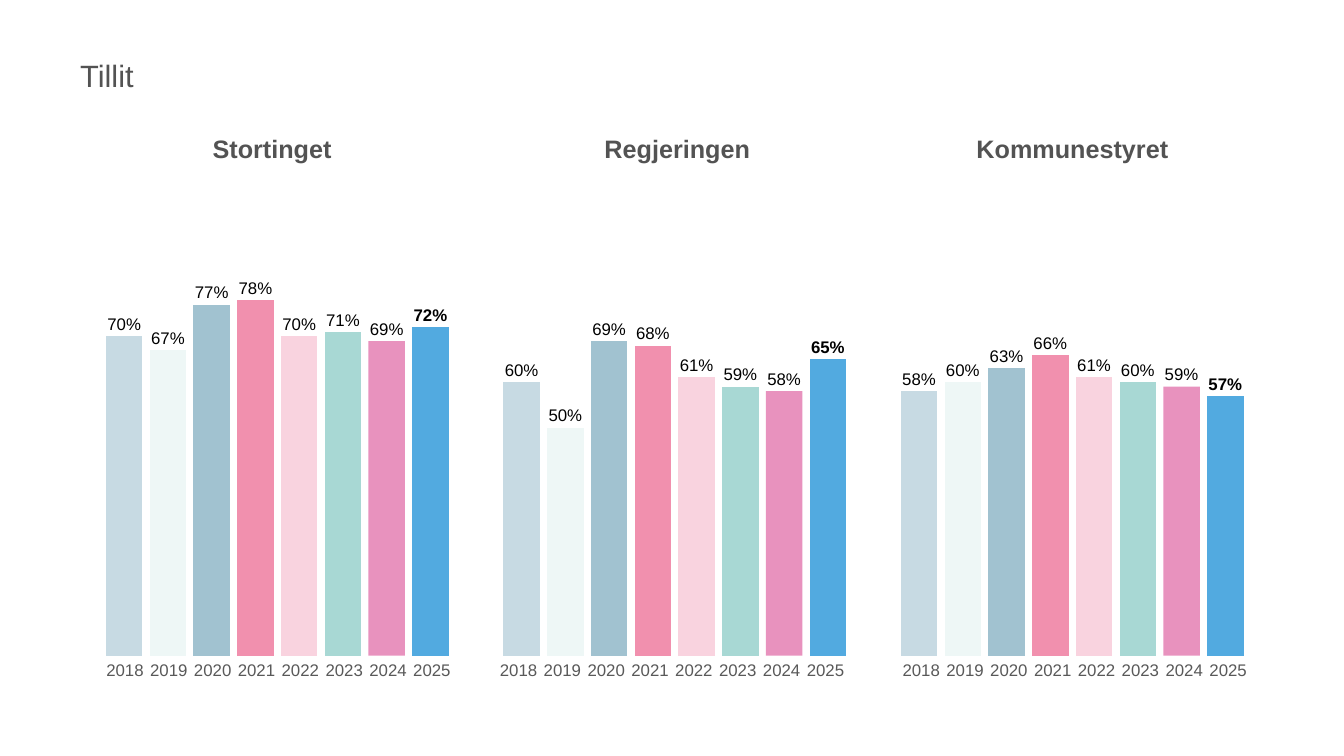
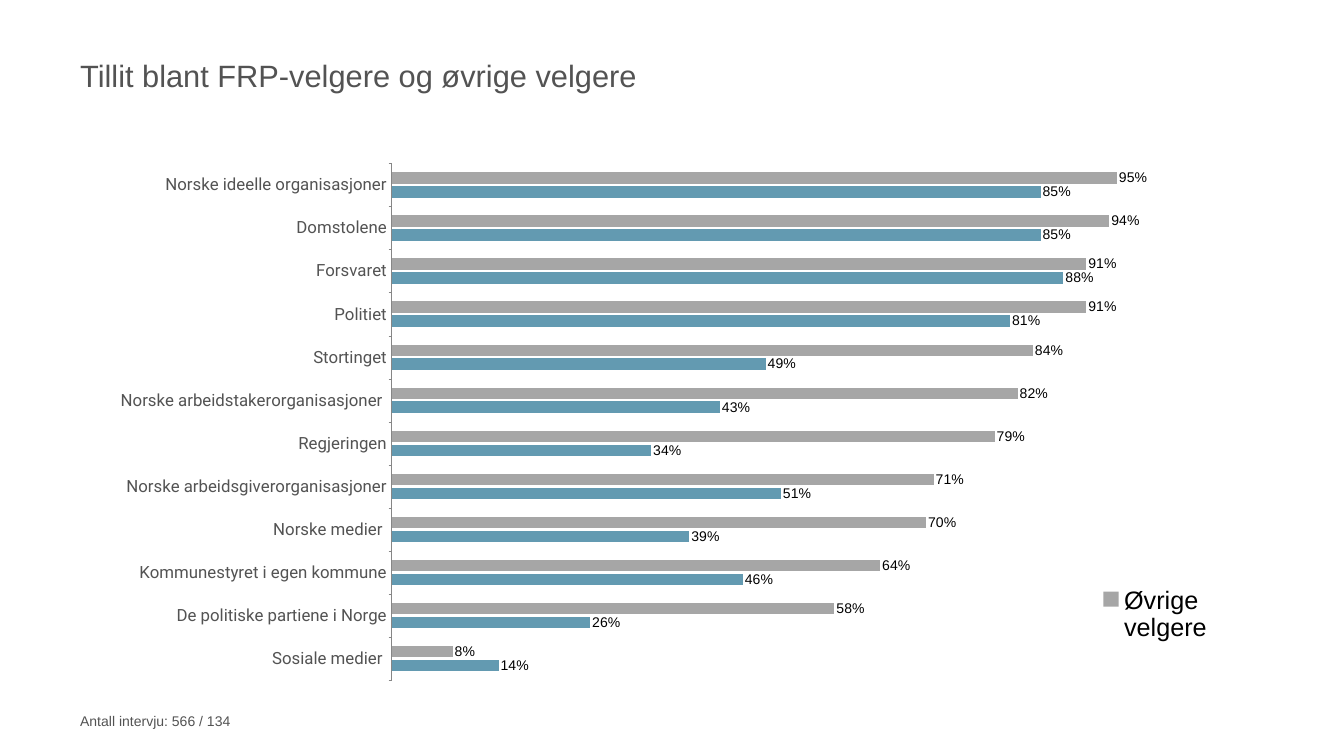
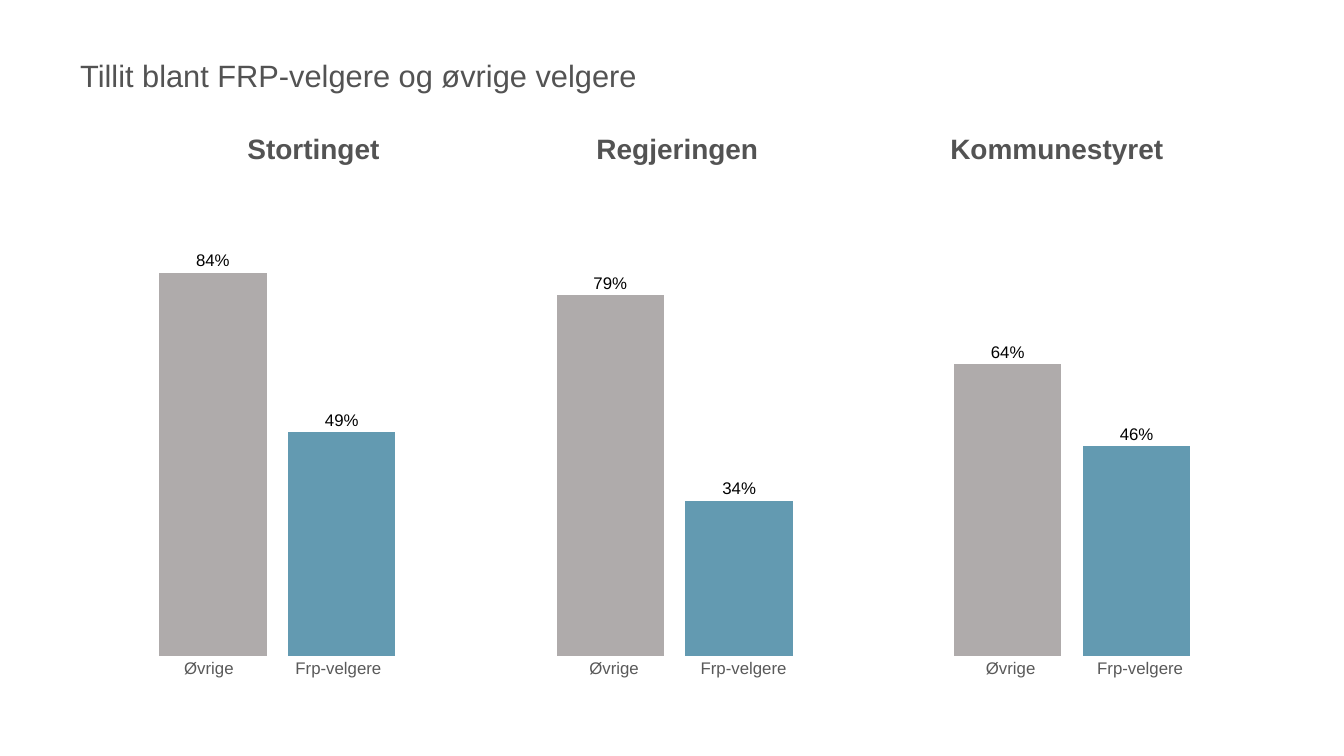
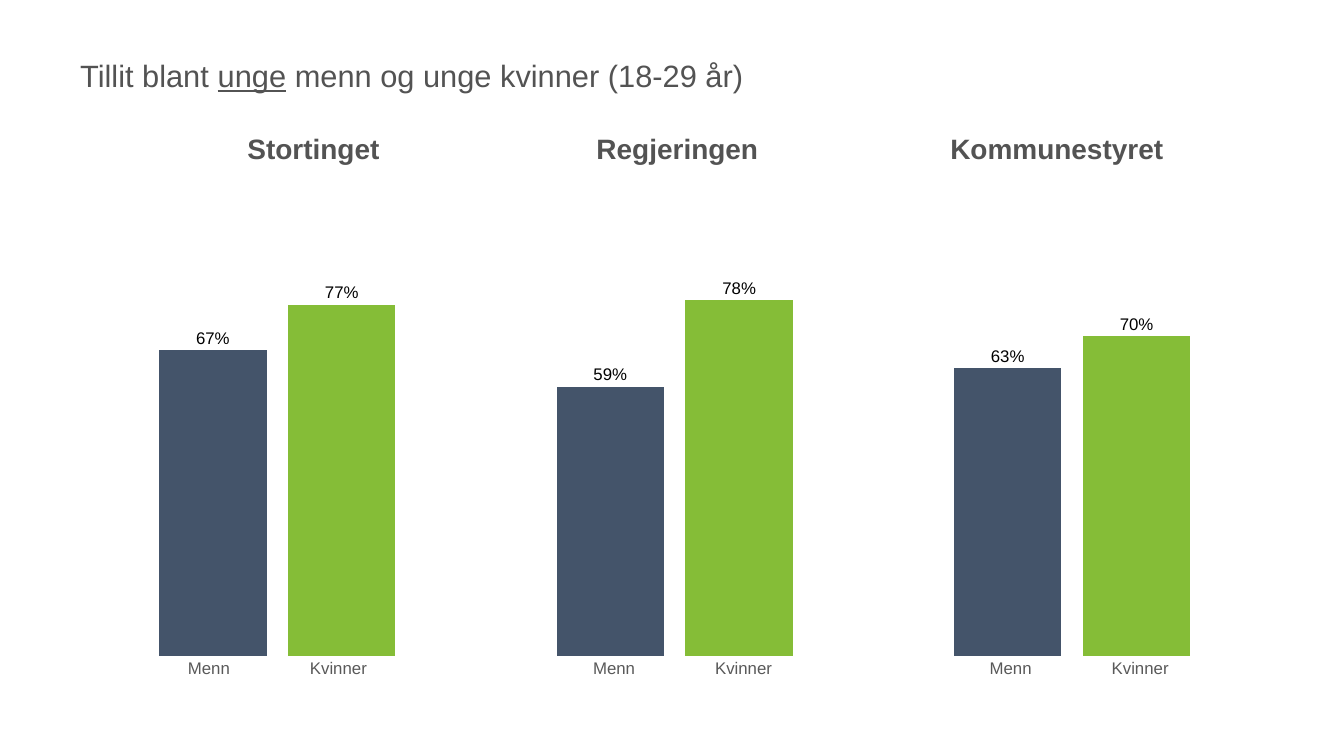
from lxml.etree import SubElement
from pptx import Presentation
from pptx.chart.data import CategoryChartData
from pptx.dml.color import RGBColor
from pptx.enum.chart import XL_CHART_TYPE, XL_LABEL_POSITION, XL_LEGEND_POSITION, XL_TICK_MARK
from pptx.enum.text import MSO_ANCHOR, PP_ALIGN
from pptx.oxml.ns import qn
from pptx.util import Inches, Pt

COLORS = {
    "text": "535353", "label": "595959", "black": "000000", "axis": "868686",
    "others": "A6A6A6", "others_warm": "AFABAB", "frp": "639AB1",
    "men": "44546A", "women": "85BD37",
    "2018": "C7DAE3", "2019": "EEF7F6", "2020": "A1C2D0", "2021": "F190AE",
    "2022": "F9D3DF", "2023": "A8D8D4", "2024": "D94A94", "2025": "52AAE0",
}
INSTITUTIONS = ["Stortinget", "Regjeringen", "Kommunestyret"]
YEARS = [str(year) for year in range(2018, 2026)]
YEAR_STEP = 0.87
COLUMN_CHART_BOX = (1.56, 2.51, 23.66, 11.17)
COLUMN_PLOT = (0, 0.13, 1, 0.81)
# Heading boxes: left and width
YEAR_HEADINGS = [(2.17, 6.46), (10.29, 6.3), (18.06, 6.44)]
GROUP_HEADINGS = [(3.2, 6.04), (10.29, 6.3), (17.82, 6.3)]


class Deck:
    """Holds the shared style and the current slide."""

    def __init__(self):
        self.presentation = Presentation()
        self.presentation.slide_width = Inches(26.67)
        self.presentation.slide_height = Inches(15)
        self.slide = None

    def style(self, font, size, color="black", **extra):
        values = {"name": "Arial", "size": Pt(size), "bold": False, **extra}
        for name, value in values.items():
            setattr(font, name, value)
        font.color.rgb = RGBColor.from_string(COLORS[color])

    def new_slide(self, *title_runs):
        """Add a slide; every second title run is underlined."""
        self.slide = self.presentation.slides.add_slide(self.presentation.slide_layouts[6])
        self.text((1.53, 0.47, 23.66, 2.04), title_runs, 44)

    def text(self, box, runs, size, color="text", align=PP_ALIGN.LEFT, bold=False, tabs=()):
        shape = self.slide.shapes.add_textbox(*map(Inches, box))
        frame = shape.text_frame
        margins = {f"margin_{side}": Inches(0.06) for side in ("left", "top", "right", "bottom")}
        for name, value in {"word_wrap": True, "vertical_anchor": MSO_ANCHOR.MIDDLE, **margins}.items():
            setattr(frame, name, value)
        paragraph = frame.paragraphs[0]
        paragraph.alignment = align
        if tabs:
            tab_list = SubElement(paragraph._p.get_or_add_pPr(), qn("a:tabLst"))
            for position in tabs:
                SubElement(tab_list, qn("a:tab"), pos=str(Inches(position)), algn="l")
        for index, content in enumerate(runs):
            run = paragraph.add_run()
            run.text = content
            self.style(run.font, size, color, bold=bold, underline=index % 2 == 1)

    def headings(self, places, size):
        for (left, width), name in zip(places, INSTITUTIONS):
            self.text((left, 1.92, width, 2.04), [name], size, align=PP_ALIGN.CENTER, bold=True)

    def layout(self, parent, index, box, inner=False):
        """Place a plot area or a legend by fractions of the chart."""
        for old in parent.findall(qn("c:layout")):
            parent.remove(old)
        layout = SubElement(parent, qn("c:layout"))
        parent.insert(index, layout)
        manual = SubElement(layout, qn("c:manualLayout"))
        values = {"layoutTarget": "inner"} if inner else {}
        values |= {"xMode": "edge", "yMode": "edge"} | dict(zip("xywh", box))
        for name, value in values.items():
            SubElement(manual, qn(f"c:{name}"), val=str(value))

    def chart(self, kind, box, plot_box, categories, series_rows, label_size):
        """series_rows holds (name, values, color) for each series."""
        data = CategoryChartData(number_format="0%")
        data.categories = categories
        for name, values, _ in series_rows:
            data.add_series(name, values)
        chart = self.slide.shapes.add_chart(kind, *map(Inches, box), data).chart
        chart.has_title = chart.has_legend = False
        self.style(chart.font, 10)
        self.layout(chart._chartSpace.chart.plotArea, 0, plot_box, inner=True)

        axis = chart.value_axis
        for name, value in {"visible": False, "has_major_gridlines": False,
                            "minimum_scale": 0, "maximum_scale": 1}.items():
            setattr(axis, name, value)
        plot = chart.plots[0]
        for name, value in {"gap_width": 150, "overlap": -20, "vary_by_categories": False}.items():
            setattr(plot, name, value)

        for series, (_, _, color) in zip(plot.series, series_rows):
            fill = series.format.fill
            fill.solid()
            fill.fore_color.rgb = RGBColor.from_string(COLORS[color])
            labels = series.data_labels
            for name, value in {"show_value": True, "number_format": "0%",
                                "number_format_is_linked": False,
                                "position": XL_LABEL_POSITION.OUTSIDE_END}.items():
                setattr(labels, name, value)
            self.style(labels.font, label_size)
        return chart

    def column_chart(self, series_rows):
        chart = self.chart(XL_CHART_TYPE.COLUMN_CLUSTERED, COLUMN_CHART_BOX, COLUMN_PLOT,
                           ["1", "2", "3"], series_rows, 24)
        chart.category_axis.visible = False
        return chart

    def group_slide(self, title_runs, groups):
        """Two groups compared for each institution; groups are (name, values, color)."""
        self.new_slide(*title_runs)
        self.column_chart([(f"Series {number}", values, color)
                           for number, (_, values, color) in enumerate(groups, 1)])
        for left in (3.1, 11.14, 19.01):
            for index, (name, _, _) in enumerate(groups):
                self.text((left + index * 2.57, 12.98, 2.09, 0.52), [name], 24, "label", PP_ALIGN.CENTER)
        self.headings(GROUP_HEADINGS, 40)


def trust_by_year(deck):
    deck.new_slide("Tillit")
    values = [(0.7, 0.6, 0.58), (0.67, 0.5, 0.6), (0.77, 0.69, 0.63), (0.78, 0.68, 0.66),
              (0.7, 0.61, 0.61), (0.71, 0.59, 0.6), (0.69, 0.58, 0.59), (0.72, 0.65, 0.57)]
    chart = deck.column_chart([(f"Series {number}", row, year)
                               for number, (row, year) in enumerate(zip(values, YEARS), 1)])
    series = chart.plots[0].series
    # The 2024 column is see-through, the 2025 labels are bold
    SubElement(series[6]._element.find(".//" + qn("a:srgbClr")), qn("a:alpha"), val="60000")
    series[7].data_labels.font.bold = True
    deck.headings(YEAR_HEADINGS, 36)
    tabs = [YEAR_STEP * index for index in range(1, len(YEARS))]
    for left in (2.05, 9.86, 17.85):
        deck.text((left, 13.02, 7.53, 0.52), ["\t".join(YEARS)], 24, "label", tabs=tabs)


def trust_by_voters(deck):
    deck.new_slide("Tillit blant FRP-velgere og øvrige velgere")
    deck.text((1.53, 13.9, 19.18, 0.8), ["Antall intervju: 566 / 134"], 20)
    rows = [
        ("Norske ideelle organisasjoner", 0.95, 0.85),
        ("Domstolene", 0.94, 0.85),
        ("Forsvaret", 0.91, 0.88),
        ("Politiet", 0.91, 0.81),
        ("Stortinget", 0.84, 0.49),
        ("Norske arbeidstakerorganisasjoner ", 0.82, 0.43),
        ("Regjeringen", 0.79, 0.34),
        ("Norske arbeidsgiverorganisasjoner", 0.71, 0.51),
        ("Norske medier ", 0.7, 0.39),
        ("Kommunestyret i egen kommune", 0.64, 0.46),
        ("De politiske partiene i Norge", 0.58, 0.26),
        ("Sosiale medier ", 0.08, 0.14),
    ]
    names, others, frp = zip(*rows)
    chart = deck.chart(XL_CHART_TYPE.BAR_CLUSTERED, (1.53, 2.89, 23.38, 10.8),
                       (0.267, 0.033, 0.648, 0.949), names,
                       [("Øvrige velgere", others, "others"), ("FRP-velgere", frp, "frp")], 20)
    axis = chart.category_axis
    for name, value in {"reverse_order": True, "has_major_gridlines": False,
                        "major_tick_mark": XL_TICK_MARK.OUTSIDE}.items():
        setattr(axis, name, value)
    deck.style(axis.tick_labels.font, 24, "text", name="Roboto")
    axis.format.line.color.rgb = RGBColor.from_string(COLORS["axis"])

    # Legend shows only the second series
    chart.has_legend = True
    legend = chart.legend
    legend.position = XL_LEGEND_POSITION.RIGHT
    legend.include_in_layout = False
    deck.style(legend.font, 36)
    deck.layout(legend._element, 1, (0.84, 0.81, 0.15, 0.1))
    entry = SubElement(legend._element, qn("c:legendEntry"))
    legend._element.insert(1, entry)
    SubElement(entry, qn("c:idx"), val="0")
    SubElement(entry, qn("c:delete"), val="1")


def main():
    deck = Deck()
    trust_by_year(deck)
    trust_by_voters(deck)
    deck.group_slide(["Tillit blant FRP-velgere og øvrige velgere"],
                     [("Øvrige", (0.84, 0.79, 0.64), "others_warm"),
                      ("Frp-velgere", (0.49, 0.34, 0.46), "frp")])
    deck.group_slide(["Tillit blant ", "unge", " menn og unge kvinner (18-29 år)"],
                     [("Menn", (0.67, 0.59, 0.63), "men"),
                      ("Kvinner", (0.77, 0.78, 0.7), "women")])
    deck.presentation.save("out.pptx")


if __name__ == "__main__":
    main()
